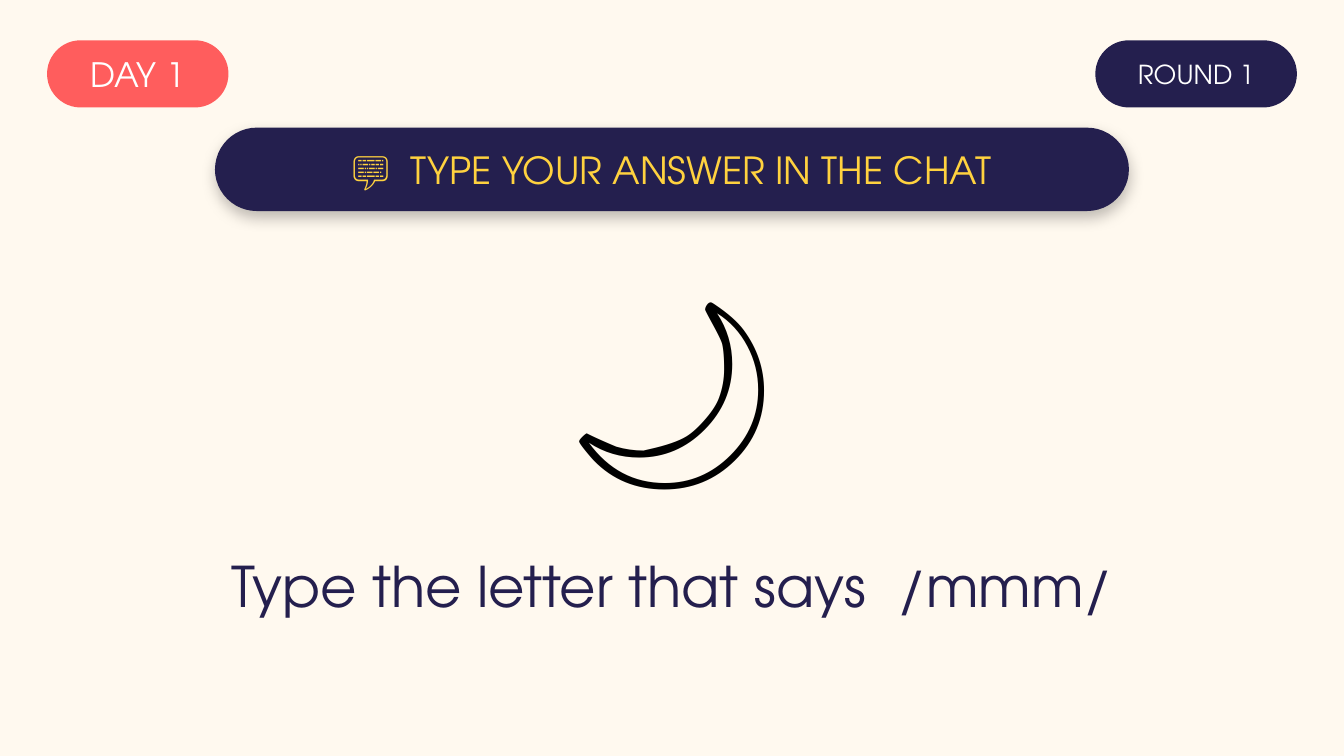
from lxml import etree
from pptx import Presentation
from pptx.dml.color import RGBColor
from pptx.enum import shapes, text
from pptx.oxml.ns import qn
from pptx.util import Pt

CREAM = RGBColor(0xFF, 0xF9, 0xEF)
CORAL = RGBColor(0xFF, 0x5D, 0x5D)
NAVY = RGBColor(0x24, 0x1F, 0x4E)
YELLOW = RGBColor(0xFF, 0xD2, 0x3F)
WHITE = RGBColor(0xFF, 0xFF, 0xFF)
BLACK = RGBColor(0, 0, 0)

WIDTH, HEIGHT = 720, 405
MARGIN = 25.2
BADGE_TOP, BADGE_HEIGHT = 21.6, 36
WIDE_SPACE = 0.28  # extra width of a wide word gap, in ems


class QuizSlide:
    font = "TeX Gyre Adventor"

    def __init__(self, prs):
        self.s = prs.slides.add_slide(prs.slide_layouts[5])
        fill = self.s.background.fill
        fill.solid()
        fill.fore_color.rgb = CREAM

    def add_line(self, tf, parts, size, color, font=None):
        """Fill a frame with one centred line; parts are split by a wide gap."""
        tf.word_wrap = True
        tf.auto_size = text.MSO_AUTO_SIZE.NONE
        p = tf.paragraphs[0]
        p.alignment = text.PP_ALIGN.CENTER
        for i, part in enumerate(parts):
            if i:
                gap = self.add_run(p, " ", size, color, font)
                gap.font._element.set("spc", str(round(size * WIDE_SPACE * 100)))
            self.add_run(p, part, size, color, font)

    def add_run(self, p, words, size, color, font):
        r = p.add_run()
        r.text = words
        r.font.name = font or self.font
        r.font.size = Pt(size)
        r.font.color.rgb = color
        return r

    def pill(self, box, fill, parts, size, color):
        sp = self.s.shapes.add_shape(
            shapes.MSO_SHAPE.ROUNDED_RECTANGLE, *map(Pt, box))
        sp.adjustments[0] = 0.5
        sp.shadow.inherit = False
        sp.fill.solid()
        sp.fill.fore_color.rgb = fill
        sp.line.fill.background()
        tf = sp.text_frame
        tf.margin_left = tf.margin_right = tf.margin_top = tf.margin_bottom = 0
        tf.vertical_anchor = text.MSO_ANCHOR.MIDDLE
        self.add_line(tf, parts, size, color)
        return sp

    def drop_shadow(self, sp, blur, distance, opacity):
        effects = sp._element.spPr.find(qn("a:effectLst"))
        shadow = etree.SubElement(
            effects, qn("a:outerShdw"), blurRad=str(Pt(blur)),
            dist=str(Pt(distance)), dir="5400000", algn="bl", rotWithShape="0")
        color = etree.SubElement(shadow, qn("a:srgbClr"), val=str(BLACK))
        etree.SubElement(color, qn("a:alpha"), val=str(opacity * 1000))

    def symbol(self, box, char, size):
        tb = self.s.shapes.add_textbox(*map(Pt, box))
        self.add_line(tb.text_frame, [char], size, BLACK, "Calibri")

    def title(self, box, parts, size, color):
        sp = self.s.shapes.title
        sp.left, sp.top, sp.width, sp.height = map(Pt, box)
        sp.text_frame.vertical_anchor = text.MSO_ANCHOR.MIDDLE
        self.add_line(sp.text_frame, parts, size, color)


def main():
    prs = Presentation()
    prs.slide_width, prs.slide_height = Pt(WIDTH), Pt(HEIGHT)
    quiz = QuizSlide(prs)

    day_width, round_width, banner_width = 97.2, 108, 489.6
    quiz.pill((MARGIN, BADGE_TOP, day_width, BADGE_HEIGHT),
              CORAL, ["DAY 1"], 18, WHITE)
    quiz.pill((WIDTH - MARGIN - round_width, BADGE_TOP, round_width, BADGE_HEIGHT),
              NAVY, ["ROUND 1"], 14, WHITE)
    banner = quiz.pill(((WIDTH - banner_width) / 2, 68.4, banner_width, 44.64),
                       NAVY, ["💬", "TYPE YOUR ANSWER IN THE CHAT"], 20, YELLOW)
    quiz.drop_shadow(banner, blur=8, distance=3, opacity=25)

    quiz.symbol((0, 122.4, WIDTH, 133.2), "🌙", 122)
    quiz.title((36, 277.2, WIDTH - 2 * 36, 72),
               ["Type the letter that says", "/mmm/"], 30, NAVY)
    prs.save("out.pptx")


if __name__ == "__main__":
    main()
